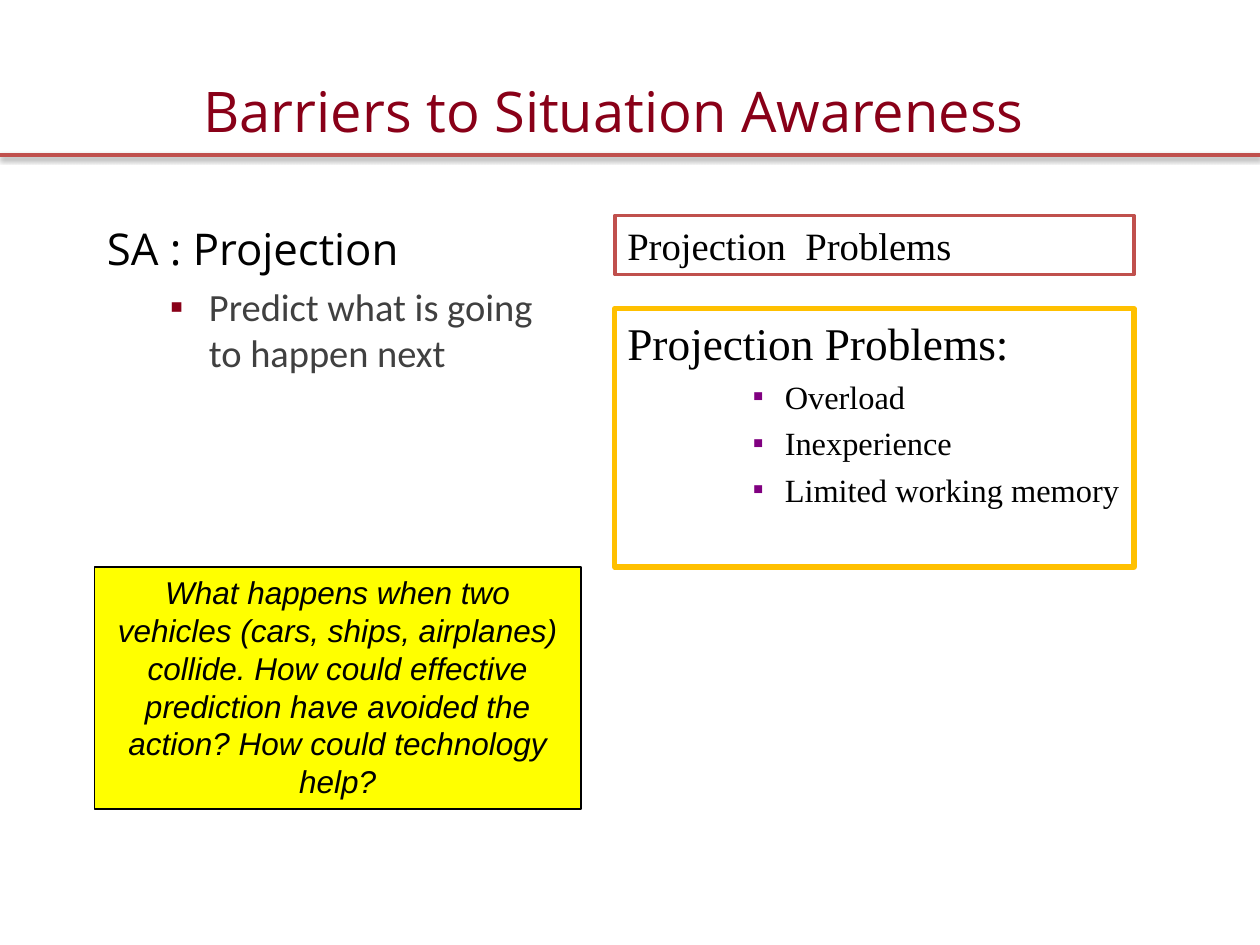
"""Build the slide on projection barriers to situation awareness."""
from lxml import etree
from pptx import Presentation
from pptx.dml.color import RGBColor
from pptx.enum.shapes import MSO_CONNECTOR, MSO_SHAPE
from pptx.enum.text import MSO_ANCHOR, PP_ALIGN
from pptx.oxml import parse_xml
from pptx.oxml.ns import nsdecls, qn
from pptx.util import Inches, Pt

LEFT, CENTER = PP_ALIGN.LEFT, PP_ALIGN.CENTER
TOP = MSO_ANCHOR.TOP
RECTANGLE = MSO_SHAPE.RECTANGLE
STRAIGHT = MSO_CONNECTOR.STRAIGHT
MAROON, RED, BLACK, GRAY = "890018", "C0504D", "000000", "404040"
SERIF = "Times New Roman"


def color(value):
    return RGBColor.from_string(value)


def add_text(frame, text, font, size, text_color=BLACK, align=LEFT, italic=False, bullet=None):
    first = not frame.text
    para = frame.paragraphs[0] if first else frame.add_paragraph()
    para.alignment = align
    if bullet:
        char, bullet_color, percent, level, margin, indent = bullet
        para.level = level
        properties = para._p.get_or_add_pPr()
        properties.set("marL", str(Inches(margin)))
        properties.set("indent", str(Inches(indent)))
        fill = etree.SubElement(properties, qn("a:buClr"))
        etree.SubElement(fill, qn("a:srgbClr"), val=bullet_color)
        etree.SubElement(properties, qn("a:buSzPct"), val=str(percent * 1000))
        etree.SubElement(properties, qn("a:buFont"), typeface="Arial")
        etree.SubElement(properties, qn("a:buChar"), char=char)
    if not first:
        para.space_before = Pt(round(size * 0.23, 1))
    span = para.add_run()
    span.text = text
    span.font.name = font
    span.font.size = Pt(size)
    span.font.italic = italic
    span.font.color.rgb = color(text_color)


deck = Presentation()
deck.slide_width, deck.slide_height = Inches(10), Inches(7.5)
page = deck.slides.add_slide(deck.slide_layouts[6])

rule = page.shapes.add_connector(STRAIGHT, Inches(0), Inches(1.23), Inches(10), Inches(1.23))
rule.line.color.rgb = color(RED)
rule.line.width = Pt(2)
rule._element.spPr.append(parse_xml(
    f'<a:effectLst {nsdecls("a")}><a:outerShdw blurRad="40000" dist="20000" dir="5400000" '
    'rotWithShape="0"><a:srgbClr val="000000"><a:alpha val="38000"/></a:srgbClr>'
    '</a:outerShdw></a:effectLst>'))

frames = {}
for name, left, top, width, height, fill, line, weight in [
    ("title", 0.75, 0.56, 8.25, 0.67, None, None, 0),
    ("body", 0.75, 1.71, 3.78, 5, None, None, 0),
    ("problems", 4.88, 2.45, 4.12, 2.05, None, "FFC000", 3),
    ("heading", 4.88, 1.71, 4.12, 0.47, "FFFFFF", RED, 2),
    ("question", 0.75, 4.5, 3.86, 1.92, "FFFF00", BLACK, 1),
]:
    place = [Inches(value) for value in (left, top, width, height)]
    if line:
        box = page.shapes.add_shape(RECTANGLE, *place)
        box.shadow.inherit = False
        box.line.color.rgb = color(line)
        box.line.width = Pt(weight)
    else:
        box = page.shapes.add_textbox(*place)
    if fill:
        box.fill.solid()
        box.fill.fore_color.rgb = color(fill)
    else:
        box.fill.background()
    box.text_frame.word_wrap = True
    box.text_frame.vertical_anchor = TOP
    frames[name] = box.text_frame

add_text(frames["title"], "Barriers to Situation Awareness", "Open Sans", 32, MAROON, CENTER)
add_text(frames["body"], "SA : Projection", "Open Sans", 25)
add_text(frames["body"], "Predict what is going to happen next", "Calibri", 22, GRAY,
         bullet=("▪", MAROON, 100, 1, 0.81, -0.31))
add_text(frames["problems"], "Projection Problems:", SERIF, 25.9)
for problem in ("Overload", "Inexperience", "Limited working memory"):
    add_text(frames["problems"], problem, SERIF, 18.5,
             bullet=("■", "800080", 50, 2, 1.25, -0.25))
add_text(frames["heading"], "Projection  Problems", SERIF, 22.1)
add_text(frames["question"],
         "What happens when two vehicles (cars, ships, airplanes) collide. How could effective "
         "prediction have avoided the action? How could technology help?",
         "Arial", 18, align=CENTER, italic=True)

deck.save("out.pptx")
